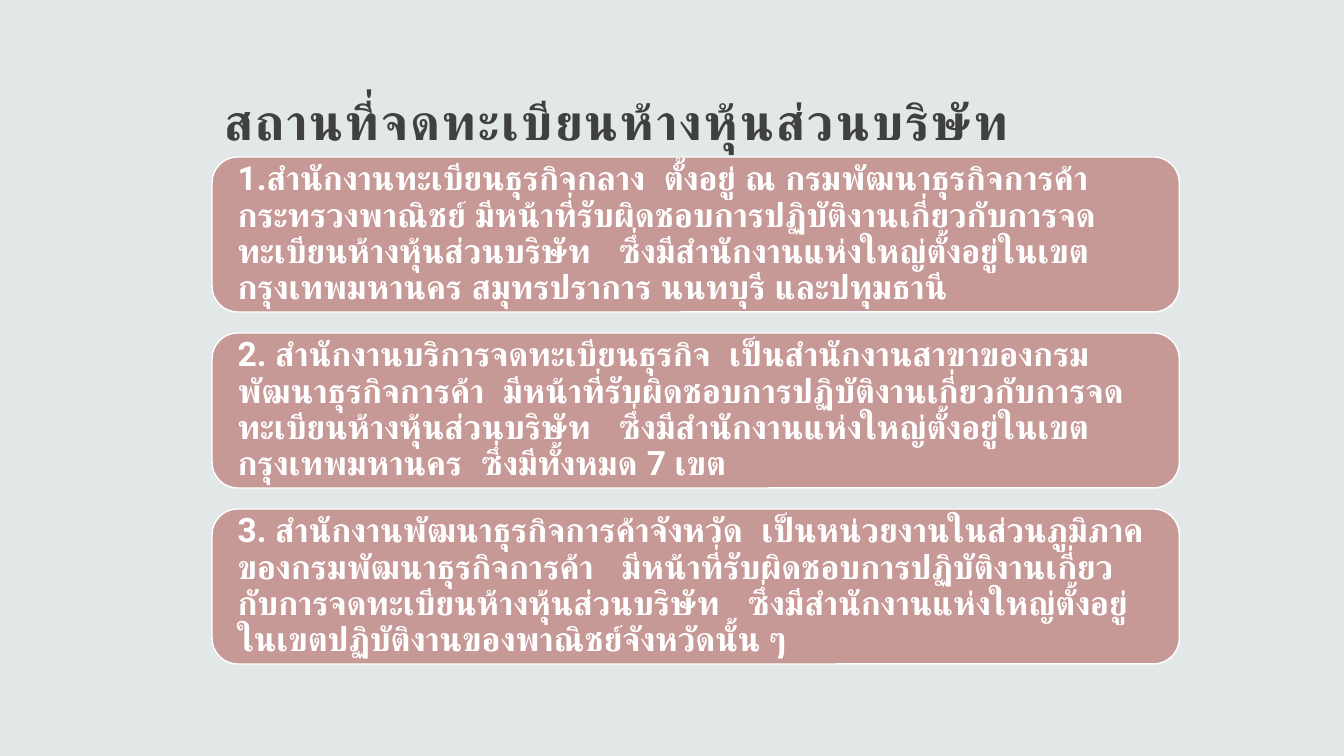
import pptx
import pptx.dml.color
import pptx.enum.lang
import pptx.enum.shapes
import pptx.enum.text
import pptx.util

PX = pptx.util.Inches(1) / 100.8
FONT = "Roboto"
LEFT, WIDTH = 212, 967
CARD_TOP, CARD_HEIGHT, CARD_PITCH = 157, 155, 176

TITLE = "สถานที่จดทะเบียนห้างหุ้นส่วนบริษัท"
OFFICES = [
    "1.สำนักงานทะเบียนธุรกิจกลาง  ตั้งอยู่ ณ กรมพัฒนาธุรกิจการค้า "
    "กระทรวงพาณิชย์ มีหน้าที่รับผิดชอบการปฏิบัติงานเกี่ยวกับการจด"
    "ทะเบียนห้างหุ้นส่วนบริษัท   ซึ่งมีสำนักงานแห่งใหญ่ตั้งอยู่ในเขต"
    "กรุงเทพมหานคร สมุทรปราการ นนทบุรี และปทุมธานี",
    "2. สำนักงานบริการจดทะเบียนธุรกิจ  เป็นสำนักงานสาขาของกรม"
    "พัฒนาธุรกิจการค้า  มีหน้าที่รับผิดชอบการปฏิบัติงานเกี่ยวกับการจด"
    "ทะเบียนห้างหุ้นส่วนบริษัท   ซึ่งมีสำนักงานแห่งใหญ่ตั้งอยู่ในเขต"
    "กรุงเทพมหานคร  ซึ่งมีทั้งหมด 7 เขต",
    "3. สำนักงานพัฒนาธุรกิจการค้าจังหวัด  เป็นหน่วยงานในส่วนภูมิภาค"
    "ของกรมพัฒนาธุรกิจการค้า   มีหน้าที่รับผิดชอบการปฏิบัติงานเกี่ยวกับ"
    "การจดทะเบียนห้างหุ้นส่วนบริษัท   ซึ่งมีสำนักงานแห่งใหญ่ตั้งอยู่ใน"
    "เขตปฏิบัติงานของพาณิชย์จังหวัดนั้น ๆ",
]


def px(length):
    return pptx.util.Emu(round(length * PX))


def color(code):
    return pptx.dml.color.RGBColor.from_string(code)


def write(box, text, size, code, spacing, inset, anchor):
    """Fill a shape with one bold, left-aligned paragraph."""
    frame = box.text_frame
    frame.word_wrap = True
    frame.vertical_anchor = anchor
    frame.margin_left = frame.margin_right = px(inset)
    frame.margin_top = frame.margin_bottom = px(10)
    para = frame.paragraphs[0]
    para.alignment = pptx.enum.text.PP_ALIGN.LEFT
    para.line_spacing = spacing
    span = para.add_run()
    span.text = text
    span.font.name = FONT
    span.font.size = pptx.util.Pt(size)
    span.font.bold = True
    span.font.color.rgb = color(code)
    span.font.language_id = pptx.enum.lang.MSO_LANGUAGE_ID.THAI
    return span


def add_title(page):
    box = page.shapes.add_textbox(px(LEFT), px(71), px(WIDTH), px(90))
    span = write(box, TITLE, 36, "404040", 1.3, 12,
                 pptx.enum.text.MSO_ANCHOR.BOTTOM)
    # Letter spacing in hundredths of a point
    span.font._element.set("spc", "150")


def add_card(page, top, text):
    card = page.shapes.add_shape(
        pptx.enum.shapes.MSO_SHAPE.ROUNDED_RECTANGLE,
        px(LEFT), px(top), px(WIDTH), px(CARD_HEIGHT))
    card.shadow.inherit = False
    card.fill.solid()
    card.fill.fore_color.rgb = color("C69896")
    card.line.color.rgb = color("FFFFFF")
    card.line.width = pptx.util.Pt(1)
    write(card, text, 24, "FFFFFF", 0.9, 18,
          pptx.enum.text.MSO_ANCHOR.MIDDLE)


def main():
    deck = pptx.Presentation()
    deck.slide_width = pptx.util.Inches(13.33)
    deck.slide_height = pptx.util.Inches(7.5)
    page = deck.slides.add_slide(deck.slide_layouts[6])

    # Background
    page.background.fill.solid()
    page.background.fill.fore_color.rgb = color("E2E8E8")

    # Title and the three registration offices
    add_title(page)
    for index, office in enumerate(OFFICES):
        add_card(page, CARD_TOP + index * CARD_PITCH, office)

    deck.save("out.pptx")


if __name__ == "__main__":
    main()
